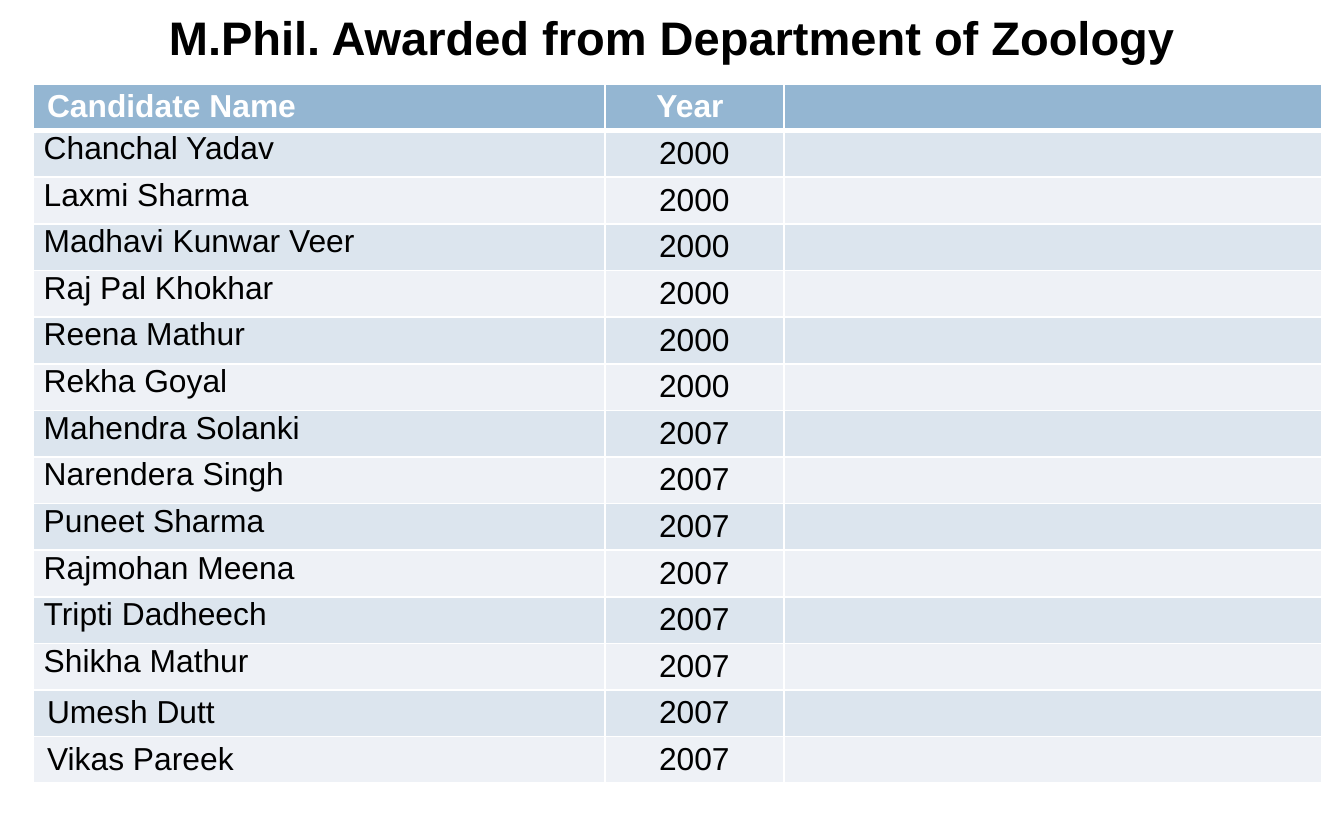
"""Build the slide listing the M.Phil. degrees awarded by the Department of Zoology."""
from dataclasses import dataclass

from lxml import etree
from pptx import Presentation
from pptx import util as u
from pptx.dml.color import RGBColor
from pptx.enum import text
from pptx.oxml.ns import qn

COLORS = {
    "ink": "000000",
    "white": "FFFFFF",
    "header": "94B6D2",
    "odd": "DCE5EE",
    "even": "EEF1F6",
}
FONT = "Arial"
CELL_SIZE = 17
ROW_HEIGHT = 25
COLUMN_WIDTHS = (306, 96, 288)
ROOMY, TIGHT = (7.2, 2.7), (5.4, 0)


@dataclass(frozen=True)
class Award:
    name: str
    year: str
    margins: tuple[float, float] = TIGHT


AWARDS = [
    Award("Chanchal Yadav", "2000"),
    Award("Laxmi Sharma", "2000"),
    Award("Madhavi Kunwar Veer", "2000"),
    Award("Raj Pal Khokhar", "2000"),
    Award("Reena Mathur", "2000"),
    Award("Rekha Goyal", "2000"),
    Award("Mahendra Solanki", "2007"),
    Award("Narendera Singh", "2007"),
    Award("Puneet Sharma", "2007"),
    Award("Rajmohan Meena", "2007"),
    Award("Tripti Dadheech", "2007"),
    Award("Shikha Mathur", "2007"),
    Award("Umesh Dutt", "2007", ROOMY),
    Award("Vikas Pareek", "2007", ROOMY),
]


def write(frame, words: str, *, size: float = CELL_SIZE, color: str = "ink",
          bold: bool = False, centered: bool = False) -> None:
    """Put formatted words in the first paragraph of a text frame."""
    paragraph = frame.paragraphs[0]
    paragraph.alignment = text.PP_ALIGN.CENTER if centered else text.PP_ALIGN.LEFT
    run = paragraph.add_run()
    run.text = words
    run.font.name = FONT
    run.font.size = u.Pt(size)
    run.font.bold = bold
    run.font.color.rgb = RGBColor.from_string(COLORS[color])


def draw_borders(cell, **widths: float) -> None:
    """Draw white cell borders, given in points by side letter."""
    properties = cell._tc.get_or_add_tcPr()
    for side, width in widths.items():
        line = etree.SubElement(properties, qn(f"a:ln{side}"), w=str(u.Pt(width)))
        fill = etree.SubElement(line, qn("a:solidFill"))
        etree.SubElement(fill, qn("a:srgbClr"), val=COLORS["white"])


def fill_row(table, index: int, award: Award) -> None:
    """Fill one table row, treating the first as the header."""
    is_header = index == 0
    band = "header" if is_header else "odd" if index % 2 else "even"
    table.rows[index].height = u.Pt(ROW_HEIGHT)
    columns = ((award.name, award.margins), (award.year, ROOMY), ("", TIGHT))
    for column, (words, (side, end)) in enumerate(columns):
        cell = table.cell(index, column)
        cell.margin_left = cell.margin_right = u.Pt(side)
        cell.margin_top = cell.margin_bottom = u.Pt(end)
        draw_borders(cell, L=1, R=1, T=3 if index == 1 else 1, B=3 if is_header else 1)
        cell.fill.solid()
        cell.fill.fore_color.rgb = RGBColor.from_string(COLORS[band])
        if words:
            write(cell.text_frame, words, color="white" if is_header else "ink",
                  bold=is_header, centered=column == 1)


def main() -> None:
    """Build and save the presentation."""
    deck = Presentation()
    deck.slide_width, deck.slide_height = u.Pt(720), u.Pt(450)
    slide = deck.slides.add_slide(deck.slide_layouts[5])

    title = slide.shapes.title
    title.left, title.top, title.width, title.height = (
        u.Pt(0), u.Pt(0), u.Pt(720), u.Pt(39))
    title.text_frame.auto_size = text.MSO_AUTO_SIZE.NONE
    title.text_frame.vertical_anchor = text.MSO_ANCHOR.MIDDLE
    write(title.text_frame, "M.Phil. Awarded from Department of Zoology",
          size=25.2, bold=True, centered=True)

    rows = [Award("Candidate Name", "Year ", ROOMY), *AWARDS]
    table = slide.shapes.add_table(
        len(rows), len(COLUMN_WIDTHS), u.Pt(18), u.Pt(45),
        u.Pt(sum(COLUMN_WIDTHS)), u.Pt(ROW_HEIGHT * len(rows))).table
    for column, width in zip(table.columns, COLUMN_WIDTHS):
        column.width = u.Pt(width)
    for index, award in enumerate(rows):
        fill_row(table, index, award)

    deck.save("out.pptx")


if __name__ == "__main__":
    main()
